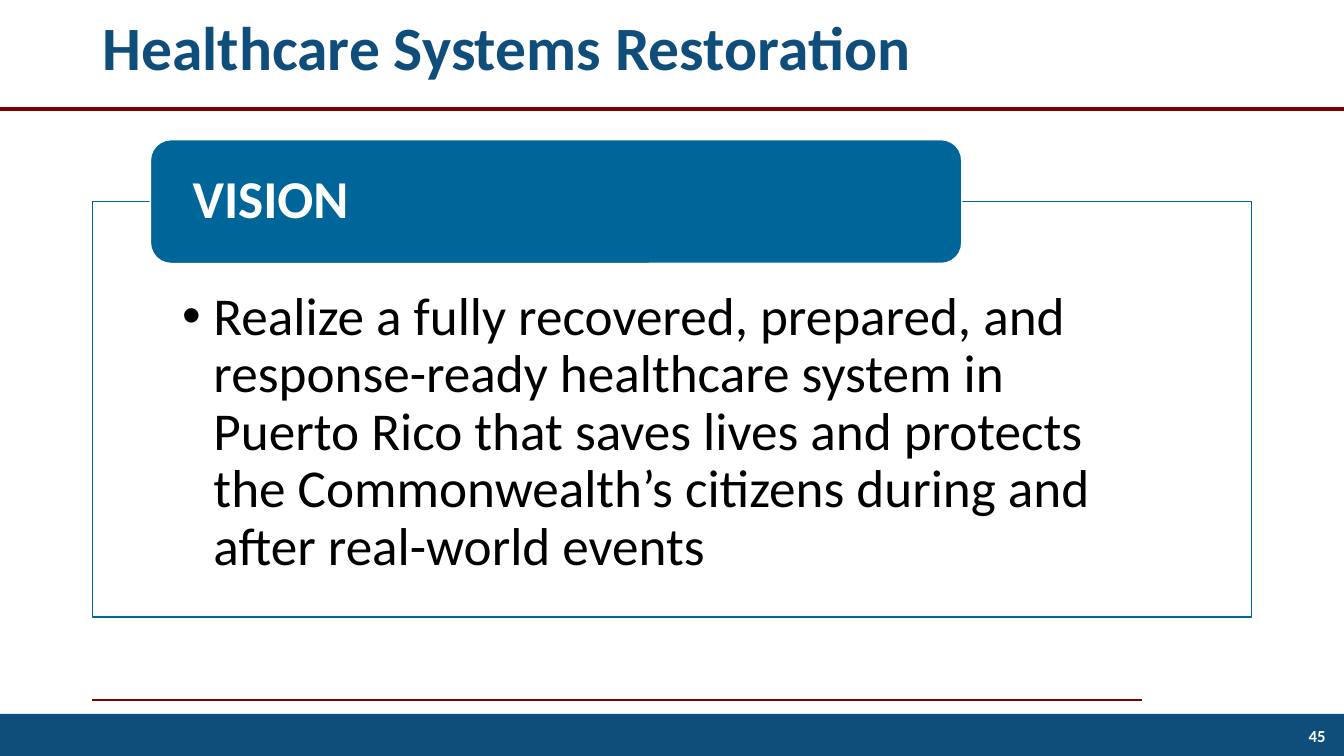
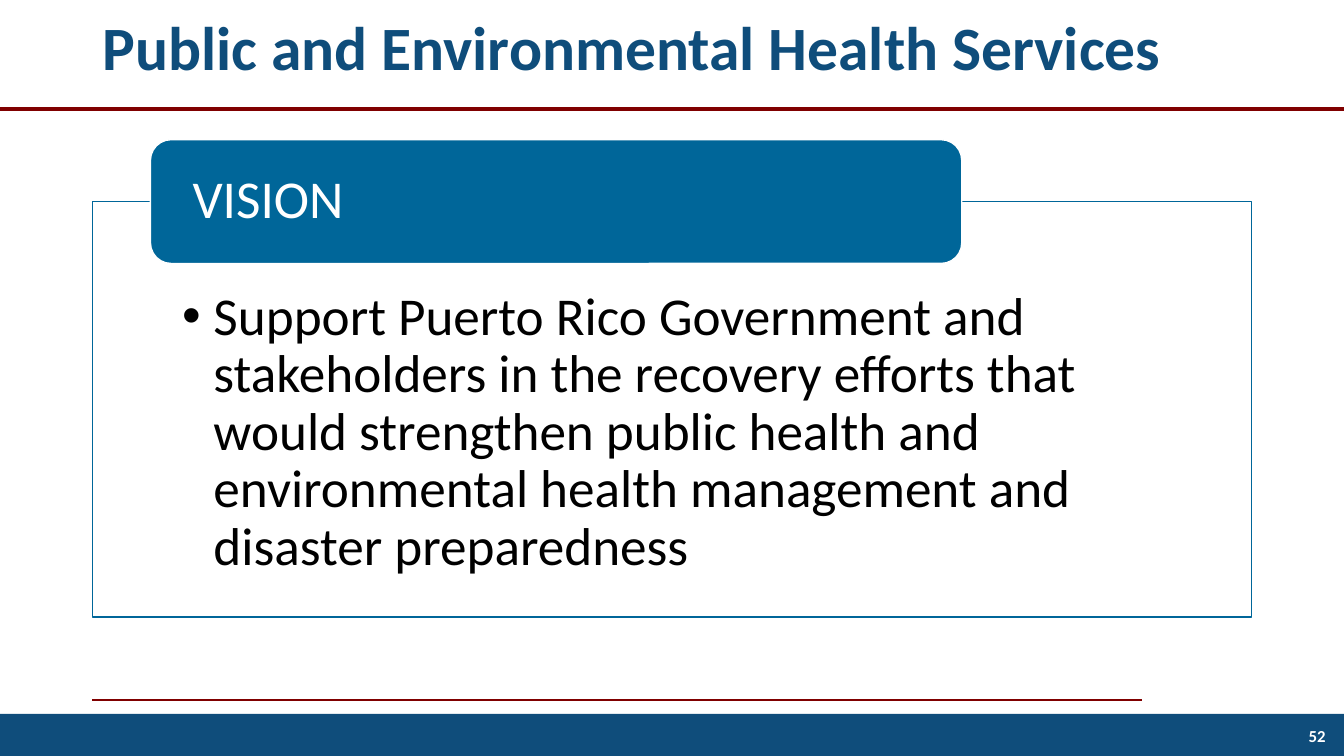
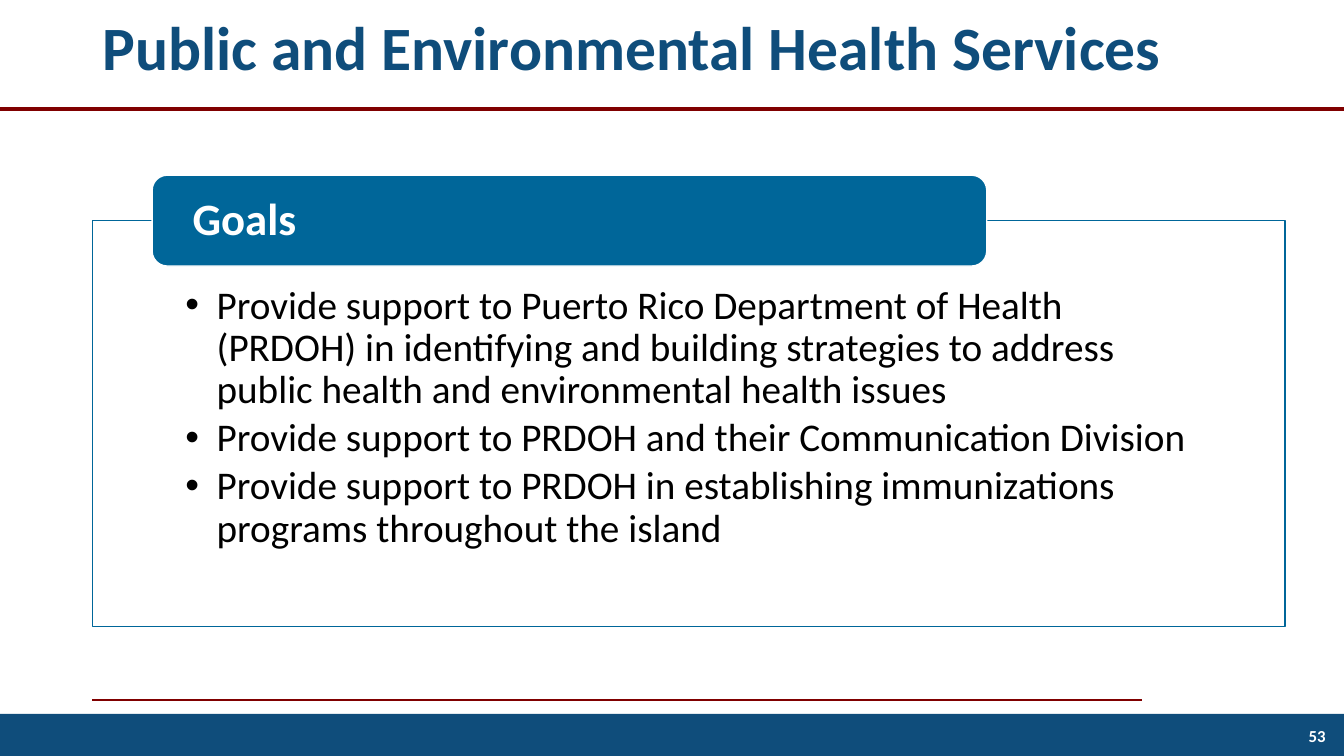
import pptx
import pptx.util
import pptx.dml.color
import pptx.enum.shapes
import pptx.enum.text
import pptx.oxml.ns
import lxml.etree

Cm = pptx.util.Cm
Pt = pptx.util.Pt
RGBColor = pptx.dml.color.RGBColor
MSO_SHAPE = pptx.enum.shapes.MSO_SHAPE
ANCHOR = pptx.enum.text.MSO_ANCHOR
ALIGN = pptx.enum.text.PP_ALIGN
AUTO_SIZE = pptx.enum.text.MSO_AUTO_SIZE
qn = pptx.oxml.ns.qn

NAVY = RGBColor(0x0F, 0x4D, 0x7B)
BLUE = RGBColor(0x00, 0x66, 0x99)
MAROON = RGBColor(0x80, 0x00, 0x00)
WHITE = RGBColor(0xFF, 0xFF, 0xFF)
BLACK = RGBColor(0x00, 0x00, 0x00)

WIDTH = 33.87
LEFT = 2.33
RULES = [(LEFT, 28.79, 17.65, 1.5), (0, WIDTH, 2.75, 3)]

VISION = {"top": 5.08, "width": 29.21, "height": 10.47, "tab": 3.12,
          "insets": (2.26, 2.21, 2.26, 0.76), "size": 38, "head_size": 38}
GOALS = {"top": 5.56, "width": 30.05, "height": 10.23, "tab": 2.29,
         "insets": (2.34, 1.63, 2.34, 0.56), "size": 28, "head_size": 32}

SLIDES = [
    ("45", "Healthcare Systems Restoration", "VISION", True, VISION, [
        "Realize a fully recovered, prepared, and response-ready healthcare system in Puerto Rico "
        "that saves lives and protects the Commonwealth’s citizens during and after real-world events",
    ]),
    ("52", "Public and Environmental Health Services", "VISION", False, VISION, [
        "Support Puerto Rico Government and stakeholders in the recovery efforts that would strengthen "
        "public health and environmental health management and disaster preparedness",
    ]),
    ("53", "Public and Environmental Health Services", "Goals", True, GOALS, [
        "Provide support to Puerto Rico Department of Health (PRDOH) in identifying and building "
        "strategies to address public health and environmental health issues",
        "Provide support to PRDOH and their Communication Division",
        "Provide support to PRDOH in establishing immunizations programs throughout the island",
    ]),
]


def place(sp, left, top, width, height):
    sp.left, sp.top, sp.width, sp.height = Cm(left), Cm(top), Cm(width), Cm(height)


def style(tf, size, color, bold, align=ALIGN.LEFT, anchor=ANCHOR.MIDDLE, spacing=0.9):
    tf.word_wrap = True
    tf.auto_size = AUTO_SIZE.NONE
    tf.vertical_anchor = anchor
    for p in tf.paragraphs:
        p.alignment = align
        p.line_spacing = spacing
        p.space_before = Pt(0)
        for r in p.runs:
            r.font.name = "Calibri"
            r.font.size = Pt(size)
            r.font.bold = bold
            r.font.color.rgb = color


prs = pptx.Presentation()
prs.slide_width = Cm(WIDTH)
prs.slide_height = Cm(19.05)

for number, title, heading, heading_bold, panel, items in SLIDES:
    s = prs.slides.add_slide(prs.slide_layouts[1])

    for x1, x2, y, weight in RULES:
        rule = s.shapes.add_connector(pptx.enum.shapes.MSO_CONNECTOR.STRAIGHT, Cm(x1), Cm(y), Cm(x2), Cm(y))
        rule.line.color.rgb = MAROON
        rule.line.width = Pt(weight)
        lxml.etree.SubElement(rule.element.spPr, qn("a:effectLst"))

    band = s.shapes.add_shape(MSO_SHAPE.RECTANGLE, 0, Cm(17.99), Cm(WIDTH), Cm(1.06))
    band.shadow.inherit = False
    band.fill.solid()
    band.fill.fore_color.rgb = NAVY
    band.line.fill.background()

    sp = s.shapes.title
    place(sp, LEFT, -0.56, 29.21, 3.68)
    sp.text_frame.text = title
    style(sp.text_frame, 44, NAVY, True)

    body = s.placeholders[1]
    place(body, LEFT, panel["top"], panel["width"], panel["height"])
    body.fill.solid()
    body.fill.fore_color.rgb = WHITE
    body.line.color.rgb = BLUE
    body.line.width = Pt(1)
    tf = body.text_frame
    tf.margin_left, tf.margin_top, tf.margin_right, tf.margin_bottom = map(Cm, panel["insets"])
    tf.text = "\n".join(items)
    for p in tf.paragraphs:
        pPr = p._p.get_or_add_pPr()
        pPr.set("marL", str(Cm(0.79)))
        pPr.set("indent", str(-Cm(0.79)))
        p.space_after = Pt(4)
    style(tf, panel["size"], BLACK, False, anchor=ANCHOR.TOP)

    tab = s.shapes.add_shape(MSO_SHAPE.ROUNDED_RECTANGLE, 0, 0, 0, 0)
    place(tab, LEFT + 0.05 * panel["width"], panel["top"] - panel["tab"] / 2, 0.7 * panel["width"], panel["tab"])
    tab.shadow.inherit = False
    tab.fill.solid()
    tab.fill.fore_color.rgb = BLUE
    tab.line.color.rgb = WHITE
    tab.line.width = Pt(1)
    tf = tab.text_frame
    tf.margin_left = tf.margin_right = Cm(0.91)
    tf.margin_top = tf.margin_bottom = 0
    tf.text = heading
    style(tf, panel["head_size"], WHITE, heading_bold)

    page = s.shapes.add_textbox(Cm(26.04), Cm(18.03), Cm(7.62), Cm(1.02))
    page.text_frame.text = number
    style(page.text_frame, 12, WHITE, True, align=ALIGN.RIGHT, spacing=1.0)

prs.save("out.pptx")
